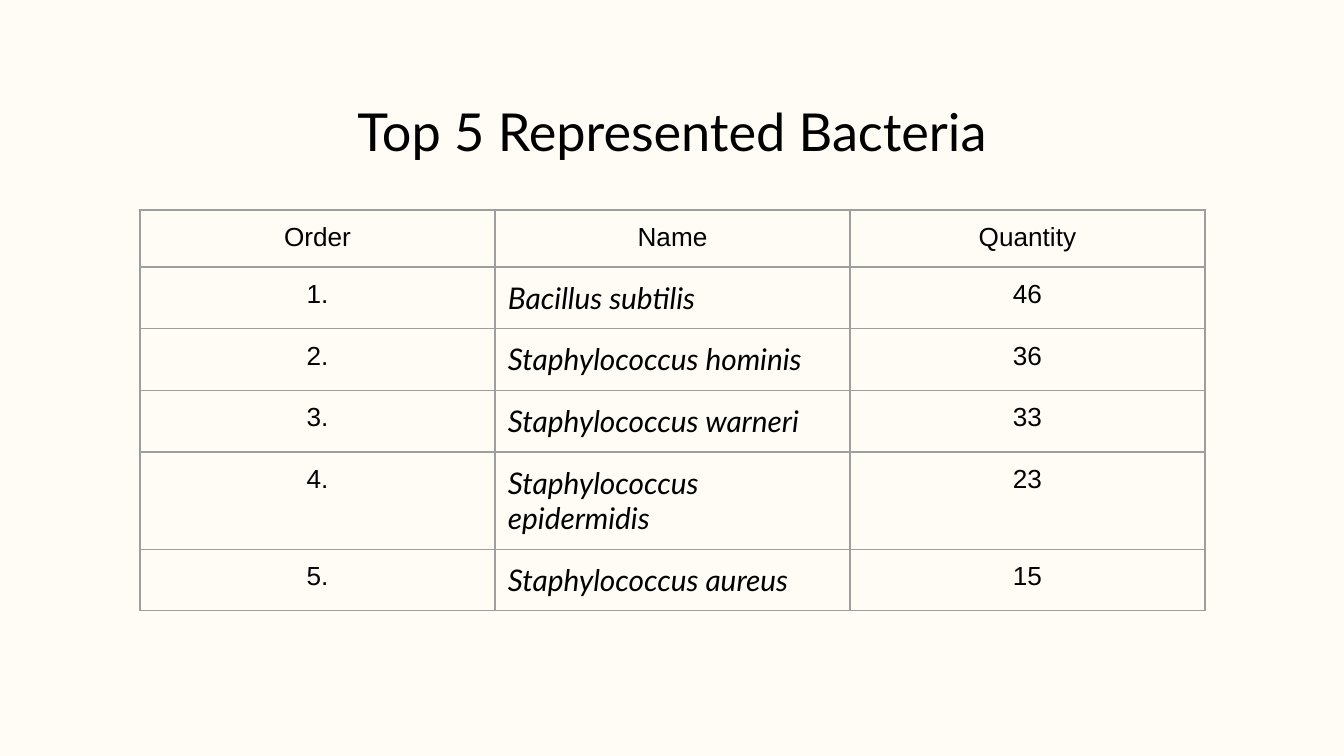
"""Builds a slide with a table of the five most represented bacteria."""
import dataclasses

import lxml.etree
import pptx
import pptx.dml.color
import pptx.enum.text
import pptx.oxml.ns
import pptx.util

PX = 9144000 / 1344
ALIGN = pptx.enum.text.PP_ALIGN
ANCHOR = pptx.enum.text.MSO_ANCHOR


def px(n):
    return pptx.util.Emu(round(n * PX))


@dataclasses.dataclass(frozen=True)
class Theme:
    back: str = "FFFCF5"
    ink: str = "000000"
    rule: str = "9E9E9E"
    head: str = "Lato"
    body: str = "Arial"
    title: int = 28
    name: int = 16
    cell: int = 14
    line: float = 0.75
    inset: int = 13


class Deck:
    def __init__(self, theme):
        self.theme = theme
        self.file = pptx.Presentation()
        self.file.slide_width = px(1344)
        self.file.slide_height = px(756)
        self.slide = self.file.slides.add_slide(self.file.slide_layouts[5])
        fill = self.slide.background.fill
        fill.solid()
        fill.fore_color.rgb = pptx.dml.color.RGBColor.from_string(theme.back)

    def label(self, para, text, font, size, align, italic=False):
        para.alignment = align
        run = para.add_run()
        run.text = text
        run.font.name = font
        run.font.size = pptx.util.Pt(size)
        run.font.italic = italic
        run.font.color.rgb = pptx.dml.color.RGBColor.from_string(self.theme.ink)

    def pad(self, box):
        box.margin_left = box.margin_right = px(self.theme.inset)
        box.margin_top = box.margin_bottom = px(self.theme.inset)
        box.vertical_anchor = ANCHOR.TOP

    def title(self, text, left, top, width, height):
        shape = self.slide.shapes.title
        shape.left, shape.top = px(left), px(top)
        shape.width, shape.height = px(width), px(height)
        frame = shape.text_frame
        frame.word_wrap = True
        frame.auto_size = pptx.enum.text.MSO_AUTO_SIZE.NONE
        self.pad(frame)
        self.label(frame.paragraphs[0], text, self.theme.head,
                   self.theme.title, ALIGN.CENTER)

    def border(self, cell):
        props = cell._tc.get_or_add_tcPr()
        qn = pptx.oxml.ns.qn
        for spot, side in enumerate("LRTB"):
            line = lxml.etree.Element(qn(f"a:ln{side}"))
            line.set("w", str(int(pptx.util.Pt(self.theme.line))))
            fill = lxml.etree.SubElement(line, qn("a:solidFill"))
            lxml.etree.SubElement(fill, qn("a:srgbClr")).set("val", self.theme.rule)
            props.insert(spot, line)

    def table(self, rows, left, top, wide, high):
        count = len(rows[0])
        frame = self.slide.shapes.add_table(
            len(rows), count, px(left), px(top), px(wide * count), px(high * len(rows)))
        grid = frame.table
        grid.first_row = grid.horz_banding = False
        for r, row in enumerate(rows):
            for c, text in enumerate(row):
                cell = grid.cell(r, c)
                cell.fill.background()
                self.pad(cell)
                self.border(cell)
                para = cell.text_frame.paragraphs[0]
                if r and c == 1:
                    para.space_after = pptx.util.Pt(12)
                    self.label(para, text, self.theme.head, self.theme.name,
                               ALIGN.LEFT, italic=True)
                else:
                    self.label(para, text, self.theme.body, self.theme.cell,
                               ALIGN.CENTER)


def main():
    deck = Deck(Theme())
    deck.title("Top 5 Represented Bacteria", 49, 86, 1246, 91)
    counts = [
        ("Bacillus subtilis", 46),
        ("Staphylococcus hominis", 36),
        ("Staphylococcus warneri", 33),
        ("Staphylococcus epidermidis", 23),
        ("Staphylococcus aureus", 15),
    ]
    rows = [("Order", "Name", "Quantity")]
    rows += [(f"{n}.", name, str(count)) for n, (name, count) in enumerate(counts, 1)]
    deck.table(rows, 140, 210, 355, 57)
    deck.file.save("out.pptx")


if __name__ == "__main__":
    main()
